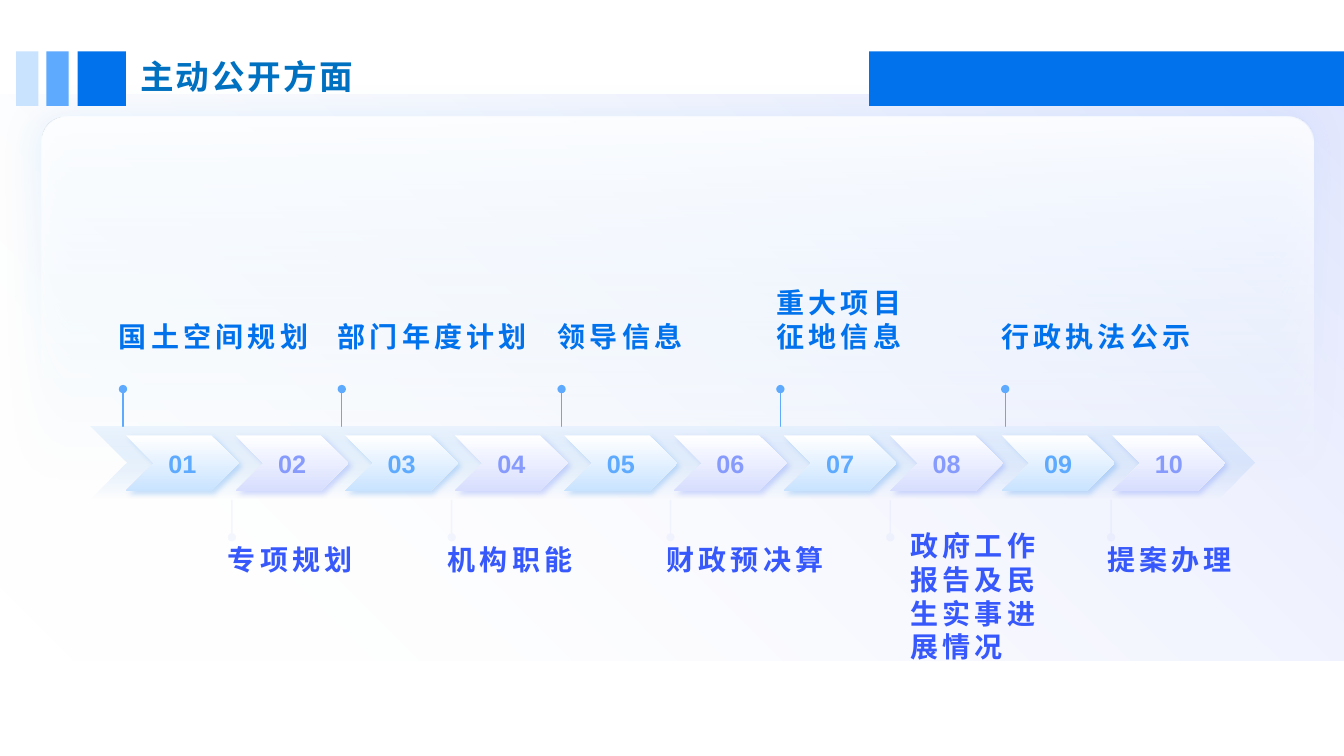
import pptx
import pptx.util
import pptx.dml.color
import pptx.enum.shapes
import pptx.enum.text
import pptx.oxml
import pptx.oxml.ns
from dataclasses import dataclass

Inches = pptx.util.Inches
Pt = pptx.util.Pt
SHAPE = pptx.enum.shapes.MSO_SHAPE
ANCHOR = pptx.enum.text.MSO_ANCHOR
ALIGN = pptx.enum.text.PP_ALIGN

TITLE = "主动公开方面"
# caption, pin x, caption width, arrow nudge from the regular pitch
MILESTONES = [
    ("国土空间规划", 1.22, 1.99, 0),
    ("专项规划", 2.3, 1.33, 0),
    ("部门年度计划", 3.39, 2.04, 0),
    ("机构职能", 4.48, 1.33, 0),
    ("领导信息", 5.57, 1.33, 0),
    ("财政预决算", 6.65, 1.73, 0),
    ("重大项目征地信息", 7.74, 1.33, 0),
    ("政府工作报告及民生实事进展情况", 8.83, 1.33, -0.03),
    ("行政执法公示", 9.97, 2.19, -0.01),
    ("提案办理", 11.02, 1.33, 0),
]
LONG_CAPTION = 7  # four lines: set lower and further right
HEADER_BARS = [
    # left, width, theme colour
    (8.62, 4.71, "blue"),
    (0.16, 0.22, "pale_blue"),
    (0.46, 0.22, "sky"),
    (0.77, 0.48, "blue"),
]
ARROW_LEFT, ARROW_PITCH = 1.25, 1.087


@dataclass(frozen=True)
class Theme:
    blue: str = "0272EC"
    sky: str = "5DAAFE"
    pale_blue: str = "C9E3FF"
    indigo: str = "3758FB"
    lilac: str = "879BFD"
    pale_lilac: str = "D7DEFE"
    glow: str = "2195F7"
    title: str = "0070C0"
    white: str = "FFFFFF"
    chinese_font: str = "Noto Sans CJK SC"
    number_font: str = "Arial"
    title_size: int = 24
    caption_size: int = 20
    number_size: int = 18


THEME = Theme()


def rgb(value):
    return pptx.dml.color.RGBColor.from_string(value)


def drawing_xml(text):
    """Parse one element that uses the a: prefix."""
    namespace = pptx.oxml.ns.nsdecls("a")
    return pptx.oxml.parse_xml(f"<a:wrapper {namespace}>{text}</a:wrapper>")[0]


def color_xml(value, opacity=100):
    return f'<a:srgbClr val="{value}"><a:alpha val="{opacity * 1000}"/></a:srgbClr>'


def add_box(slide, kind, bounds, color=None):
    shape = slide.shapes.add_shape(kind, *map(Inches, bounds))
    shape.shadow.inherit = False
    shape.line.fill.background()
    if color:
        shape.fill.solid()
        shape.fill.fore_color.rgb = rgb(color)
    return shape


def set_gradient(shape, angle, *stops):
    """Fill with (position, colour, opacity) stops, angle clockwise."""
    shape.fill.background()
    properties = shape._element.spPr
    no_fill = properties.find(pptx.oxml.ns.qn("a:noFill"))
    stop_xml = "".join(
        f'<a:gs pos="{position * 1000}">{color_xml(color, opacity)}</a:gs>'
        for position, color, opacity in stops)
    properties.replace(no_fill, drawing_xml(
        f'<a:gradFill rotWithShape="1"><a:gsLst>{stop_xml}</a:gsLst>'
        f'<a:lin ang="{angle * 60000}" scaled="0"/></a:gradFill>'))


def set_shadow(shape, color, opacity, blur, distance, angle):
    effects = shape._element.spPr.find(pptx.oxml.ns.qn("a:effectLst"))
    effects.append(drawing_xml(
        f'<a:outerShdw blurRad="{Pt(blur)}" dist="{Pt(distance)}" '
        f'dir="{angle * 60000}" algn="ctr" rotWithShape="0">'
        f'{color_xml(color, opacity)}</a:outerShdw>'))


def write(shape, text, font_name, size, color, spacing=0):
    paragraph = shape.text_frame.paragraphs[0]
    paragraph.text = text
    font = paragraph.font
    font.name, font.size, font.bold = font_name, Pt(size), True
    font.color.rgb = rgb(color)
    defaults = paragraph._p.pPr.find(pptx.oxml.ns.qn("a:defRPr"))
    if spacing:
        defaults.set("spc", str(round(spacing * 100)))
        defaults.append(drawing_xml(f'<a:ea typeface="{font_name}"/>'))
    return paragraph


def add_pin(slide, x, top, bottom, color, opacity, dot_end):
    pin = slide.shapes.add_connector(
        pptx.enum.shapes.MSO_CONNECTOR.STRAIGHT,
        Inches(x), Inches(top), Inches(x), Inches(bottom))
    pin.line.width = Pt(1)
    pin.line.color.rgb = rgb(color)
    line = pin._element.spPr.find(pptx.oxml.ns.qn("a:ln"))
    line.find(".//" + pptx.oxml.ns.qn("a:srgbClr")).append(
        drawing_xml(f'<a:alpha val="{opacity * 1000}"/>'))
    line.append(drawing_xml(f'<a:{dot_end} type="oval"/>'))
    pin._element.spPr.append(drawing_xml("<a:effectLst/>"))


def add_caption(slide, index, caption, pin_x, width):
    above = index % 2 == 0
    left, top = pin_x - 0.04, 3.11 if above else 5.33
    if index == LONG_CAPTION:
        left, top = 9.03, 6.19
    box = slide.shapes.add_textbox(*map(Inches, (left, top, width, 0.39)))
    frame = box.text_frame
    frame.word_wrap = True
    frame.vertical_anchor = ANCHOR.BOTTOM
    frame.margin_left = frame.margin_right = 0
    frame.margin_top = frame.margin_bottom = 0
    write(box, caption, THEME.chinese_font, THEME.caption_size,
          THEME.blue if above else THEME.indigo, spacing=3)
    if above:
        add_pin(slide, pin_x, 3.86, 4.24, THEME.sky, 100, "headEnd")
    else:
        add_pin(slide, pin_x, 4.96, 5.33, THEME.lilac, 8, "tailEnd")


def add_arrow(slide, index, nudge):
    if index % 2 == 0:
        tint, shade, ink = THEME.pale_blue, THEME.blue, THEME.sky
    else:
        tint, shade, ink = THEME.pale_lilac, THEME.indigo, THEME.lilac
    left = ARROW_LEFT + index * ARROW_PITCH + nudge
    arrow = add_box(slide, SHAPE.CHEVRON, (left, 4.32, 1.12, 0.55))
    set_gradient(arrow, 90, (0, THEME.white, 100), (100, tint, 100))
    set_shadow(arrow, shade, 20, 4, 3, 45)
    arrow.text_frame.word_wrap = False
    arrow.text_frame.vertical_anchor = ANCHOR.MIDDLE
    paragraph = write(arrow, f"{index + 1:02d}", THEME.number_font,
                      THEME.number_size, ink)
    paragraph.alignment = ALIGN.CENTER


def add_background(slide):
    wash = add_box(slide, SHAPE.RECTANGLE, (0, 0.94, 13.33, 5.61))
    set_gradient(wash, 315, (0, THEME.white, 0), (100, THEME.indigo, 15))
    panel = add_box(slide, SHAPE.ROUNDED_RECTANGLE, (0.41, 1.16, 12.62, 4.99))
    panel.adjustments[0] = 0.054
    set_gradient(panel, 90, (0, THEME.white, 88), (72, THEME.white, 0))
    set_shadow(panel, THEME.glow, 13, 27, 3, 180)


def add_header(slide):
    title = slide.shapes.add_textbox(*map(Inches, (1.31, 0.51, 2.29, 0.48)))
    title.text_frame.word_wrap = False
    title.text_frame.margin_left = title.text_frame.margin_right = Inches(0.08)
    title.text_frame.margin_top = title.text_frame.margin_bottom = Inches(0.04)
    write(title, TITLE, THEME.chinese_font, THEME.title_size, THEME.title, 1.6)
    for left, width, color in HEADER_BARS:
        add_box(slide, SHAPE.RECTANGLE, (left, 0.51, width, 0.54),
                getattr(THEME, color))


def main():
    presentation = pptx.Presentation()
    presentation.slide_width = Inches(13.33)
    presentation.slide_height = Inches(7.5)
    slide = presentation.slides.add_slide(presentation.slide_layouts[6])
    add_background(slide)
    for index, (caption, pin_x, width, _) in enumerate(MILESTONES):
        add_caption(slide, index, caption, pin_x, width)
    band = add_box(slide, SHAPE.CHEVRON, (0.9, 4.23, 11.54, 0.72))
    set_gradient(band, 90, (0, THEME.pale_blue, 30), (100, THEME.blue, 0))
    for index, (_, _, _, nudge) in enumerate(MILESTONES):
        add_arrow(slide, index, nudge)
    add_header(slide)
    presentation.save("out.pptx")


if __name__ == "__main__":
    main()
